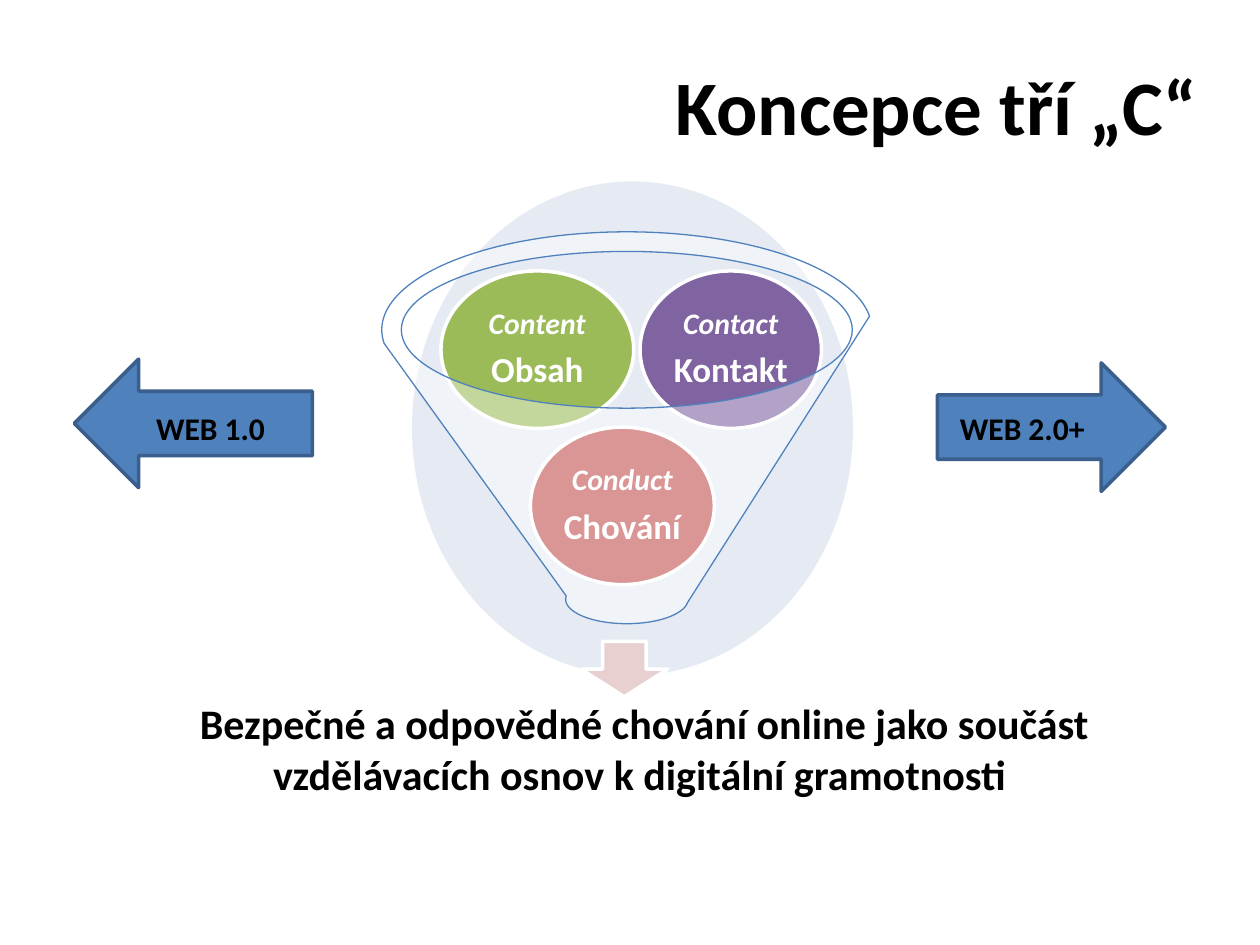
"""Build the slide on the three-C concept of safe online behaviour."""
from lxml import etree
from pptx import Presentation
from pptx.dml.color import RGBColor
from pptx.enum.shapes import MSO_SHAPE as SHAPE
from pptx.enum.text import MSO_ANCHOR as ANCHOR, PP_ALIGN as ALIGN
from pptx.oxml.ns import qn
from pptx.util import Inches, Pt

COLORS = {
    "black": "000000", "white": "FFFFFF", "halo": "C2CDE1", "pale": "E8D0D0",
    "red": "C0504D", "green": "9BBB59", "purple": "8064A2",
    "blue": "4F81BD", "edge": "3A5F8C",
}


def add_figure(kind, box, fill, line=None, width=2, opacity=None):
    sp = s.shapes.add_shape(kind, *map(Inches, box))
    sp.shadow.inherit = False
    sp.fill.solid()
    sp.fill.fore_color.rgb = RGBColor.from_string(COLORS[fill])
    if opacity:
        color = sp.fill._xPr.find(".//" + qn("a:srgbClr"))
        etree.SubElement(color, qn("a:alpha"), val=str(opacity * 1000))
    if line:
        sp.line.color.rgb = RGBColor.from_string(COLORS[line])
        sp.line.width = Pt(width)
    else:
        sp.line.fill.background()
    return sp


def write(p, text, size, color="black", align=ALIGN.LEFT, italic=False):
    p.alignment = align
    r = p.add_run()
    r.text = text
    font = {"name": "Calibri", "size": Pt(size), "bold": True, "italic": italic}
    for name, value in font.items():
        setattr(r.font, name, value)
    r.font.color.rgb = RGBColor.from_string(COLORS[color])


prs = Presentation()
prs.slide_width, prs.slide_height = Inches(10), Inches(7.5)
s = prs.slides.add_slide(prs.slide_layouts[5])

title = s.shapes.title
title_box = {"left": 0.61, "top": 0.21, "width": 9, "height": 1.25}
for name, value in title_box.items():
    setattr(title, name, Inches(value))
title.text_frame.vertical_anchor = ANCHOR.MIDDLE
write(title.text_frame.paragraphs[0], "Koncepce tří „C“", 44, align=ALIGN.RIGHT)

add_figure(SHAPE.OVAL, (3.27, 1.44, 3.5, 3.92), "halo", opacity=40)
add_figure(SHAPE.DOWN_ARROW, (4.61, 5.09, 0.69, 0.44), "pale", "white")

balls = [
    ("Conduct", "Chování", 4.21, 3.39, 1.46, "red"),
    ("Content", "Obsah", 3.5, 2.15, 1.53, "green"),
    ("Contact", "Kontakt", 5.08, 2.15, 1.44, "purple"),
]
for english, czech, left, top, width, fill in balls:
    sp = add_figure(SHAPE.OVAL, (left, top, width, 1.25), fill, "white")
    tf = sp.text_frame
    tf.word_wrap = True
    tf.vertical_anchor = ANCHOR.MIDDLE
    for side in ("left", "top", "right", "bottom"):
        setattr(tf, f"margin_{side}", Inches(0.02))
    write(tf.paragraphs[0], english, 17, "white", ALIGN.CENTER, italic=True)
    write(tf.add_paragraph(), czech, 20, "white", ALIGN.CENTER)
    for p in tf.paragraphs:
        p.line_spacing = 0.9
        p.space_after = Pt(6.5)

add_figure(SHAPE.FUNNEL, (3.03, 1.84, 3.89, 3.11), "white", "blue", 0.75, 40)

arrows = [((0.59, 2.85, 1.89, 1.02), 180), ((7.44, 2.88, 1.81, 1.02), 0)]
for box, angle in arrows:
    add_figure(SHAPE.RIGHT_ARROW, box, "blue", "edge").rotation = angle

conclusion = ("Bezpečné a odpovědné chování online jako součást "
              "vzdělávacích osnov k digitální gramotnosti ")
captions = [
    ("WEB 1.0", (1.14, 3.2, 1.34, 0.4), 18, ALIGN.LEFT),
    ("WEB 2.0+", (7.52, 3.2, 1.34, 0.4), 18, ALIGN.LEFT),
    (conclusion, (1.36, 5.49, 7.51, 1.21), 24, ALIGN.CENTER),
]
for text, box, size, align in captions:
    tf = s.shapes.add_textbox(*map(Inches, box)).text_frame
    tf.word_wrap = True
    write(tf.paragraphs[0], text, size, align=align)

prs.save("out.pptx")
